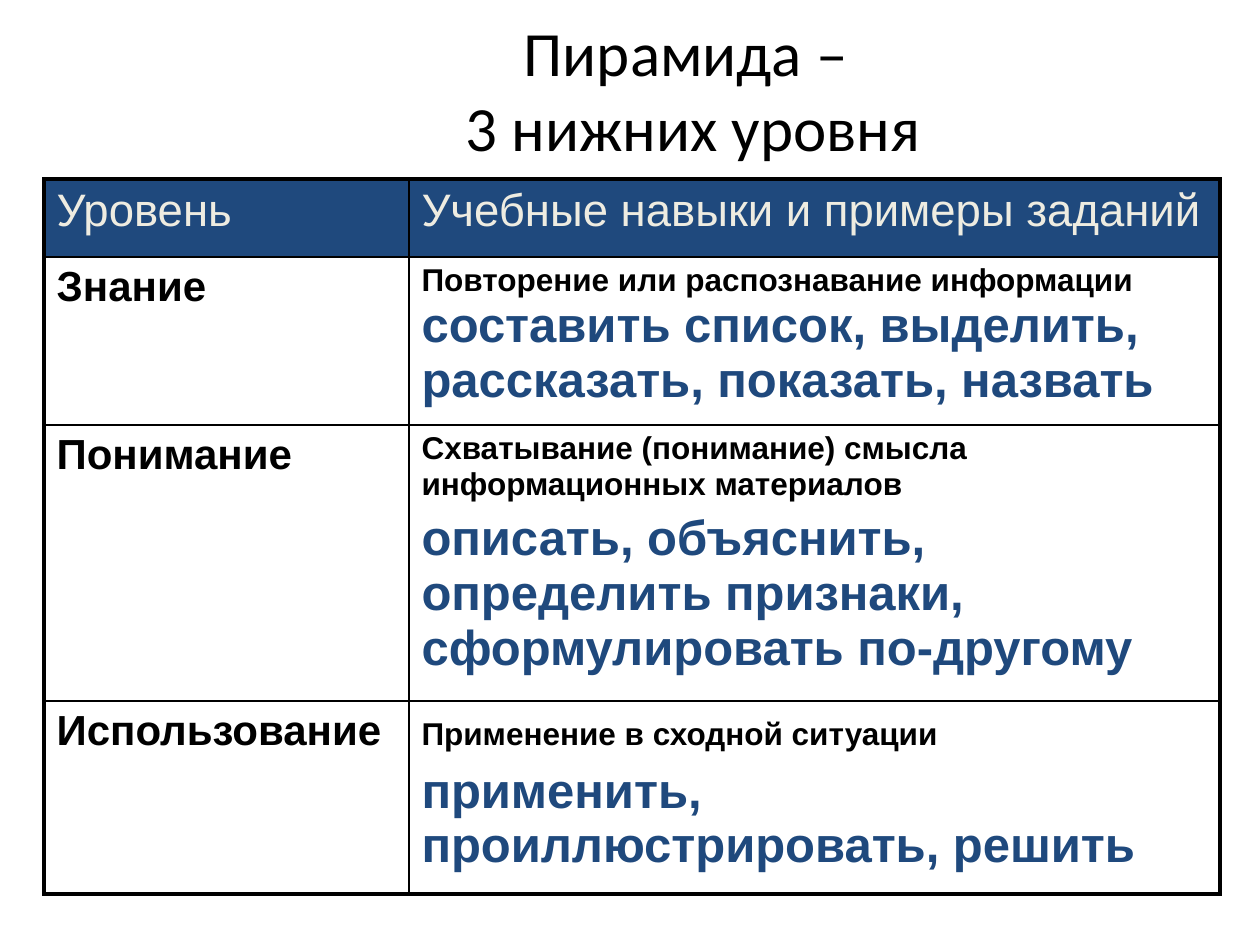
from dataclasses import dataclass

from lxml import etree
from pptx import Presentation
from pptx.dml.color import RGBColor
from pptx.enum.text import MSO_ANCHOR, MSO_AUTO_SIZE, PP_ALIGN
from pptx.oxml.ns import qn
from pptx.util import Emu, Pt

MIDDLE = MSO_ANCHOR.MIDDLE
NO_FIT = MSO_AUTO_SIZE.NONE
CENTER = PP_ALIGN.CENTER

SCALE = 914400 / 126
COLORS = {"black": "000000", "navy": "1F497D", "cream": "EEECE1"}
COLS = [365, 811]
ROWS = [78, 168, 276, 193]
TITLE_ONLY = 5
THICK, THIN = 2.25, 1


@dataclass
class Level:
    name: str
    skill: str
    tasks: str
    split: bool = True
    tail: int = 0  # size of the space that ends the skill line


LEVELS = [
    Level("Знание", "Повторение или распознавание информации ",
          "составить список, выделить, рассказать, показать, назвать", split=False),
    Level("Понимание", "Схватывание (понимание) смысла информационных материалов",
          "описать, объяснить, определить признаки, сформулировать по-другому"),
    Level("Использование", "Применение в сходной ситуации",
          "применить, проиллюстрировать, решить", tail=24),
]


def px(count: int) -> Emu:
    return Emu(round(count * SCALE))


def write(para, text: str, *, size: int, color: str = "black",
          bold: bool = True, font: str = "Arial") -> None:
    run = para.add_run()
    run.text = text
    run.font.size = Pt(size)
    run.font.bold = bold
    run.font.name = font
    run.font.color.rgb = RGBColor.from_string(COLORS[color])


def add_title(slide) -> None:
    title = slide.shapes.title
    title.left, title.top, title.width, title.height = map(px, (158, 10, 1070, 158))
    frame = title.text_frame
    frame.word_wrap = True
    frame.auto_size = NO_FIT
    frame.vertical_anchor = MIDDLE
    para = frame.paragraphs[0]
    para.alignment = CENTER
    look = {"size": 36, "bold": False, "font": "Calibri"}
    write(para, "Пирамида – ", **look)
    para.add_line_break()
    write(para, "3 нижних уровня", **look)


def add_border(cell, sides: dict[str, float]) -> None:
    """Draw the cell's edges, given as side letter to width in points."""
    props = cell._tc.get_or_add_tcPr()
    for spot, (side, width) in enumerate(sides.items()):
        line = etree.Element(qn(f"a:ln{side}"), w=str(Pt(width)))
        fill = etree.SubElement(line, qn("a:solidFill"))
        etree.SubElement(fill, qn("a:srgbClr"), val=COLORS["black"])
        props.insert(spot, line)


def add_grid(slide):
    frame = slide.shapes.add_table(len(ROWS), len(COLS), px(44), px(179),
                                   px(sum(COLS)), px(sum(ROWS)))
    table = frame.table
    table.first_row = table.horz_banding = False
    for col, width in zip(table.columns, COLS):
        col.width = px(width)
    for row, height in zip(table.rows, ROWS):
        row.height = px(height)
    for r in range(len(ROWS)):
        for c in range(len(COLS)):
            cell = table.cell(r, c)
            if r == 0:
                cell.fill.solid()
                cell.fill.fore_color.rgb = RGBColor.from_string(COLORS["navy"])
            else:
                cell.fill.background()
            outer = {"L": c == 0, "R": c == len(COLS) - 1,
                     "T": r == 0, "B": r == len(ROWS) - 1}
            add_border(cell, {side: THICK if edge else THIN
                              for side, edge in outer.items()})
    return table


def fill_level(table, row: int, level: Level) -> None:
    write(table.cell(row, 0).text_frame.paragraphs[0], level.name, size=24)
    frame = table.cell(row, 1).text_frame
    para = frame.paragraphs[0]
    write(para, level.skill, size=18)
    if level.tail:
        write(para, " ", size=level.tail)
    if level.split:
        para = frame.add_paragraph()
        para.space_before = Pt(5.6)
    write(para, level.tasks, size=28, color="navy")


def main() -> None:
    deck = Presentation()
    deck.slide_width, deck.slide_height = px(1260), px(945)
    slide = deck.slides.add_slide(deck.slide_layouts[TITLE_ONLY])
    add_title(slide)
    table = add_grid(slide)
    for col, text in enumerate(["Уровень", "Учебные навыки и примеры заданий"]):
        write(table.cell(0, col).text_frame.paragraphs[0], text,
              size=26, color="cream", bold=False)
    for row, level in enumerate(LEVELS, start=1):
        fill_level(table, row, level)
    deck.save("out.pptx")


if __name__ == "__main__":
    main()
